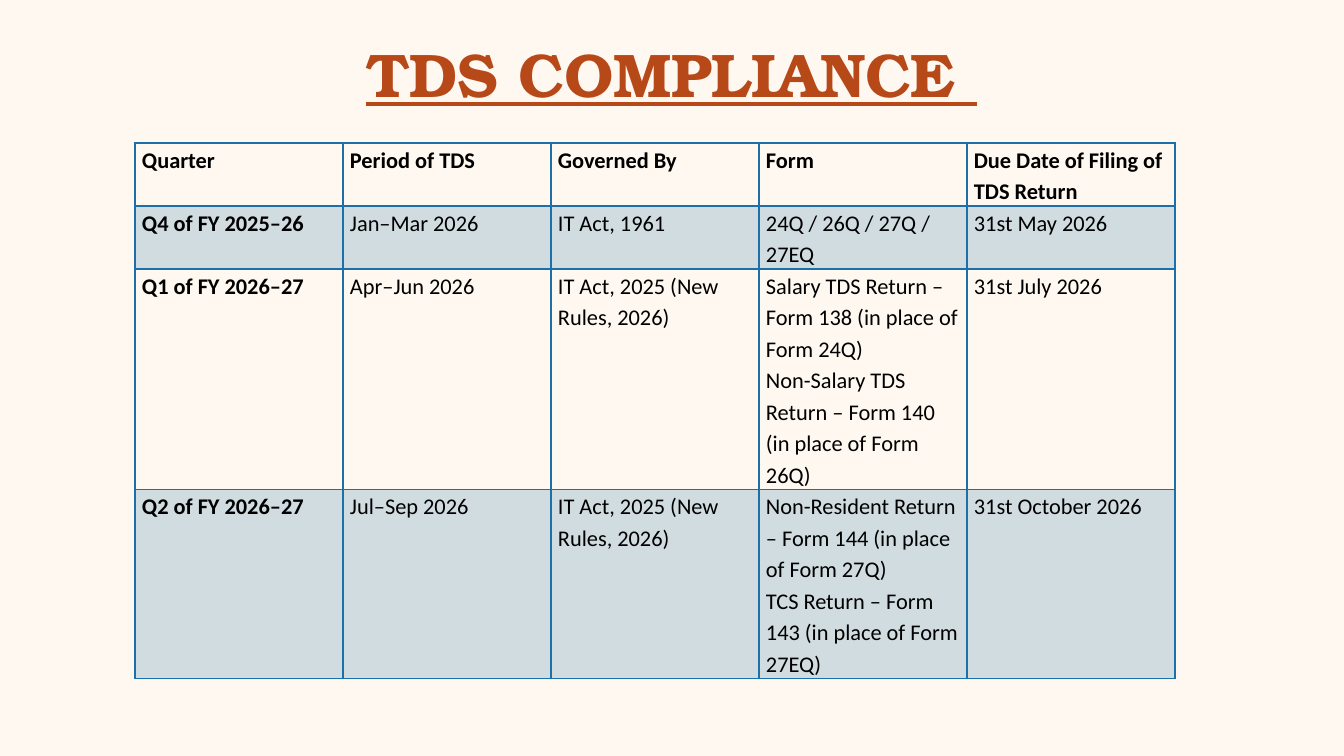
from lxml import etree
from pptx import Presentation
from pptx.dml.color import RGBColor
from pptx.enum.text import MSO_ANCHOR, MSO_AUTO_SIZE, PP_ALIGN
from pptx.oxml.ns import qn
from pptx.util import Emu, Pt

MIDDLE, TOP = MSO_ANCHOR.MIDDLE, MSO_ANCHOR.TOP
CENTER, LEFT = PP_ALIGN.CENTER, PP_ALIGN.LEFT
FIXED = MSO_AUTO_SIZE.NONE
TITLE_ONLY = 5

HEADS = ["Quarter", "Period of TDS", "Governed By", "Form",
         "Due Date of Filing of TDS Return"]
NEW_ACT = "IT Act, 2025 (New Rules, 2026)"
ROWS = [
    ["Q4 of FY 2025–26", "Jan–Mar 2026", "IT Act, 1961",
     "24Q / 26Q / 27Q / 27EQ", "31st May 2026"],
    ["Q1 of FY 2026–27", "Apr–Jun 2026", NEW_ACT,
     "Salary TDS Return – Form 138 (in place of Form 24Q)\v"
     "Non-Salary TDS Return – Form 140 (in place of Form 26Q)",
     "31st July 2026"],
    ["Q2 of FY 2026–27", "Jul–Sep 2026", NEW_ACT,
     "Non-Resident Return – Form 144 (in place of Form 27Q)\v"
     "TCS Return – Form 143 (in place of Form 27EQ)",
     "31st October 2026"],
]
HEIGHTS = [63, 63, 220, 189]
COL_WIDTH = 208


def px(n):
    return Emu(round(n * 914400 / 100.8))


def color(code):
    return RGBColor.from_string(code)


class Deck:
    paper, rust, blue, ink = "FEF8F0", "B74919", "1D6FA9", "000000"
    serif, sans = "TeX Gyre Bonum", "Calibri"

    def __init__(self, prs):
        self.slide = prs.slides.add_slide(prs.slide_layouts[TITLE_ONLY])
        fill = self.slide.background.fill
        fill.solid()
        fill.fore_color.rgb = color(self.paper)

    def style(self, para, face, size, tint, bold):
        font = para.font
        font.name, font.size, font.bold = face, Pt(size), bold
        font.color.rgb = color(tint)
        return font

    def title(self, text, x, y, w, h, below):
        box = self.slide.shapes.title
        box.left, box.top, box.width, box.height = map(px, (x, y, w, h))
        frame = box.text_frame
        frame.text = text
        frame.auto_size = FIXED
        frame.vertical_anchor = MIDDLE
        frame.margin_bottom = px(below)
        para = frame.paragraphs[0]
        para.alignment, para.line_spacing = CENTER, 0.9
        self.style(para, self.serif, 44, self.rust, True).underline = True

    def edge(self, cell, side, width):
        props = cell._tc.get_or_add_tcPr()
        line = etree.SubElement(props, qn("a:ln" + side), w=str(Pt(width)))
        fill = etree.SubElement(line, qn("a:solidFill"))
        etree.SubElement(fill, qn("a:srgbClr"), val=self.blue)

    def cell(self, cell, text, bold, shade, above, below):
        cell.text = text
        cell.vertical_anchor = TOP
        cell.margin_left = cell.margin_right = px(7)
        cell.margin_top = cell.margin_bottom = 0
        para = cell.text_frame.paragraphs[0]
        para.alignment, para.line_spacing = LEFT, 1.15
        self.style(para, self.sans, 16, self.ink, bold)
        for side, width in zip("LRTB", (1, 1, above, below)):
            self.edge(cell, side, width)
        if shade:
            cell.fill.solid()
            cell.fill.fore_color.rgb = color(self.blue)
            tint = cell._tc.tcPr.find(qn("a:solidFill"))[0]
            etree.SubElement(tint, qn("a:alpha"), val="20000")
        else:
            cell.fill.background()

    def table(self, rows, x, y, width, heights):
        count = len(rows[0])
        table = self.slide.shapes.add_table(
            len(rows), count, px(x), px(y),
            px(width * count), px(sum(heights))).table
        table.horz_banding = False
        for col in table.columns:
            col.width = px(width)
        for r, texts in enumerate(rows):
            table.rows[r].height = px(heights[r])
            for c, text in enumerate(texts):
                self.cell(table.cell(r, c), text, bold=r == 0 or c == 0,
                          shade=r % 2 == 1, above=2 if r == 1 else 1,
                          below=2 if r == 0 else 1)


def main():
    prs = Presentation()
    prs.slide_width, prs.slide_height = px(1344), px(756)
    deck = Deck(prs)
    # Heading
    deck.title("TDS COMPLIANCE ", 92, 40, 1159, 146, below=75)
    # Filing dates by quarter
    deck.table([HEADS] + ROWS, 135, 143, COL_WIDTH, HEIGHTS)
    prs.save("out.pptx")


if __name__ == "__main__":
    main()
